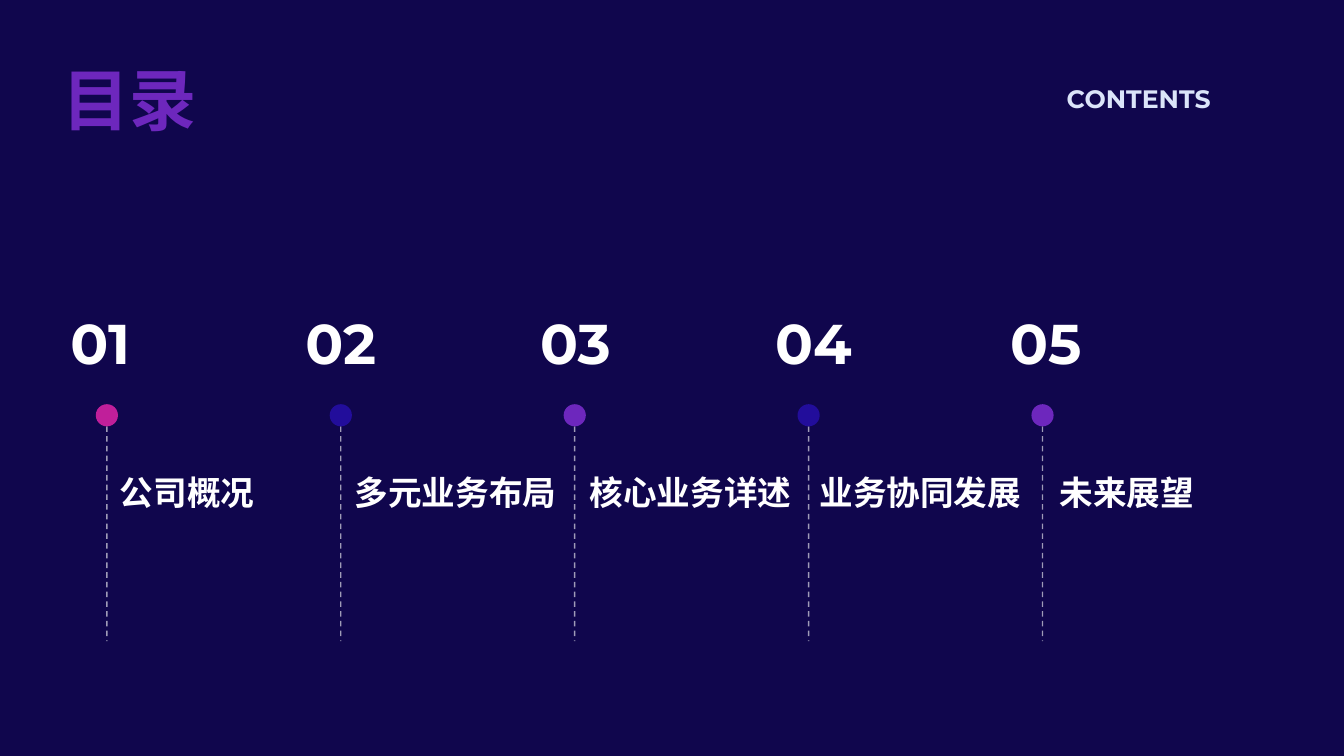
import pptx
import pptx.dml.color
import pptx.enum.dml
import pptx.enum.shapes
import pptx.enum.text
import pptx.oxml
import pptx.oxml.ns
import pptx.util
from dataclasses import dataclass

TITLE = "目录"
SUBTITLE = "CONTENTS"
# heading, dot colour role, sideways nudge of the heading in inches
CHAPTERS = [
    ("公司概况", "pink", 0),
    ("多元业务布局", "blue", 0),
    ("核心业务详述", "purple", 0),
    ("业务协同发展", "blue", -0.05),
    ("未来展望", "purple", 0),
]


@dataclass(frozen=True)
class Theme:
    background: str = "10064D"
    white: str = "FFFFFF"
    pale: str = "DBE4F9"
    pink: str = "C01F9A"
    blue: str = "220D9B"
    purple: str = "6D27BD"
    heading_font: str = "Arial"
    latin_font: str = "Montserrat"
    title_size: int = 48
    number_size: int = 40
    heading_size: int = 24
    subtitle_size: int = 18


THEME = Theme()
WIDTH, HEIGHT = 13.33, 7.5
COLUMN = 2.33
NUMBER_LEFT, NUMBER_TOP, NUMBER_HEIGHT = 0.6, 3.01, 0.77
HEADING_LEFT, HEADING_TOP, HEADING_HEIGHT = 1.09, 4.63, 1.48
STEM_LEFT, STEM_PITCH, STEM_BOTTOM = 1.06, 2.32, 6.36
DOT_TOP, DOT_SIZE = 4.01, 0.22

inch = pptx.util.Inches
rgb = pptx.dml.color.RGBColor.from_string
Anchor = pptx.enum.text.MSO_ANCHOR
Align = pptx.enum.text.PP_ALIGN


def add_text(slide, text, box, *, size, font, color=THEME.white,
             anchor=Anchor.TOP, align=Align.LEFT):
    frame = slide.shapes.add_textbox(*map(inch, box)).text_frame
    frame.word_wrap = True
    frame.vertical_anchor = anchor
    paragraph = frame.paragraphs[0]
    paragraph.alignment = align
    run = paragraph.add_run()
    run.text = text
    run.font.size = pptx.util.Pt(size)
    run.font.name = font
    run.font.bold = True
    run.font.color.rgb = rgb(color)


def add_stem(slide, x):
    """Dashed, part-transparent line hanging below a dot."""
    stem = slide.shapes.add_connector(
        pptx.enum.shapes.MSO_CONNECTOR.STRAIGHT,
        inch(x), inch(DOT_TOP + DOT_SIZE), inch(x), inch(STEM_BOTTOM))
    stem.line.width = pptx.util.Pt(1)
    stem.line.color.rgb = rgb(THEME.white)
    stem.line.dash_style = pptx.enum.dml.MSO_LINE.DASH
    properties = stem._element.spPr
    color = properties.find(".//" + pptx.oxml.ns.qn("a:srgbClr"))
    alpha = pptx.oxml.parse_xml(
        f'<a:alpha {pptx.oxml.ns.nsdecls("a")} val="60000"/>')
    color.append(alpha)
    properties.append(pptx.oxml.parse_xml(
        f'<a:effectLst {pptx.oxml.ns.nsdecls("a")}/>'))


def add_dot(slide, x, color):
    dot = slide.shapes.add_shape(
        pptx.enum.shapes.MSO_SHAPE.OVAL, inch(x - DOT_SIZE / 2),
        inch(DOT_TOP), inch(DOT_SIZE), inch(DOT_SIZE))
    dot.shadow.inherit = False
    dot.fill.solid()
    dot.fill.fore_color.rgb = rgb(color)
    dot.line.fill.background()


def add_chapter(slide, index, heading, role, nudge):
    shift = index * COLUMN
    stem_x = STEM_LEFT + index * STEM_PITCH
    add_stem(slide, stem_x)
    add_dot(slide, stem_x, getattr(THEME, role))
    add_text(slide, heading,
             (HEADING_LEFT + shift + nudge, HEADING_TOP, COLUMN, HEADING_HEIGHT),
             size=THEME.heading_size, font=THEME.heading_font)
    add_text(slide, f"{index + 1:02}",
             (NUMBER_LEFT + shift, NUMBER_TOP, COLUMN, NUMBER_HEIGHT),
             size=THEME.number_size, font=THEME.latin_font, anchor=Anchor.BOTTOM)


def main():
    deck = pptx.Presentation()
    deck.slide_width, deck.slide_height = inch(WIDTH), inch(HEIGHT)
    slide = deck.slides.add_slide(deck.slide_layouts[6])
    slide.background.fill.solid()
    slide.background.fill.fore_color.rgb = rgb(THEME.background)

    add_text(slide, TITLE, (0.52, 0.52, 2.03, 0.91), size=THEME.title_size,
             font=THEME.heading_font, color=THEME.purple,
             anchor=Anchor.BOTTOM, align=Align.JUSTIFY)
    add_text(slide, SUBTITLE, (10.48, 0.78, 2.3, 0.4), size=THEME.subtitle_size,
             font=THEME.latin_font, color=THEME.pale, align=Align.JUSTIFY)
    for index, chapter in enumerate(CHAPTERS):
        add_chapter(slide, index, *chapter)
    deck.save("out.pptx")


if __name__ == "__main__":
    main()
